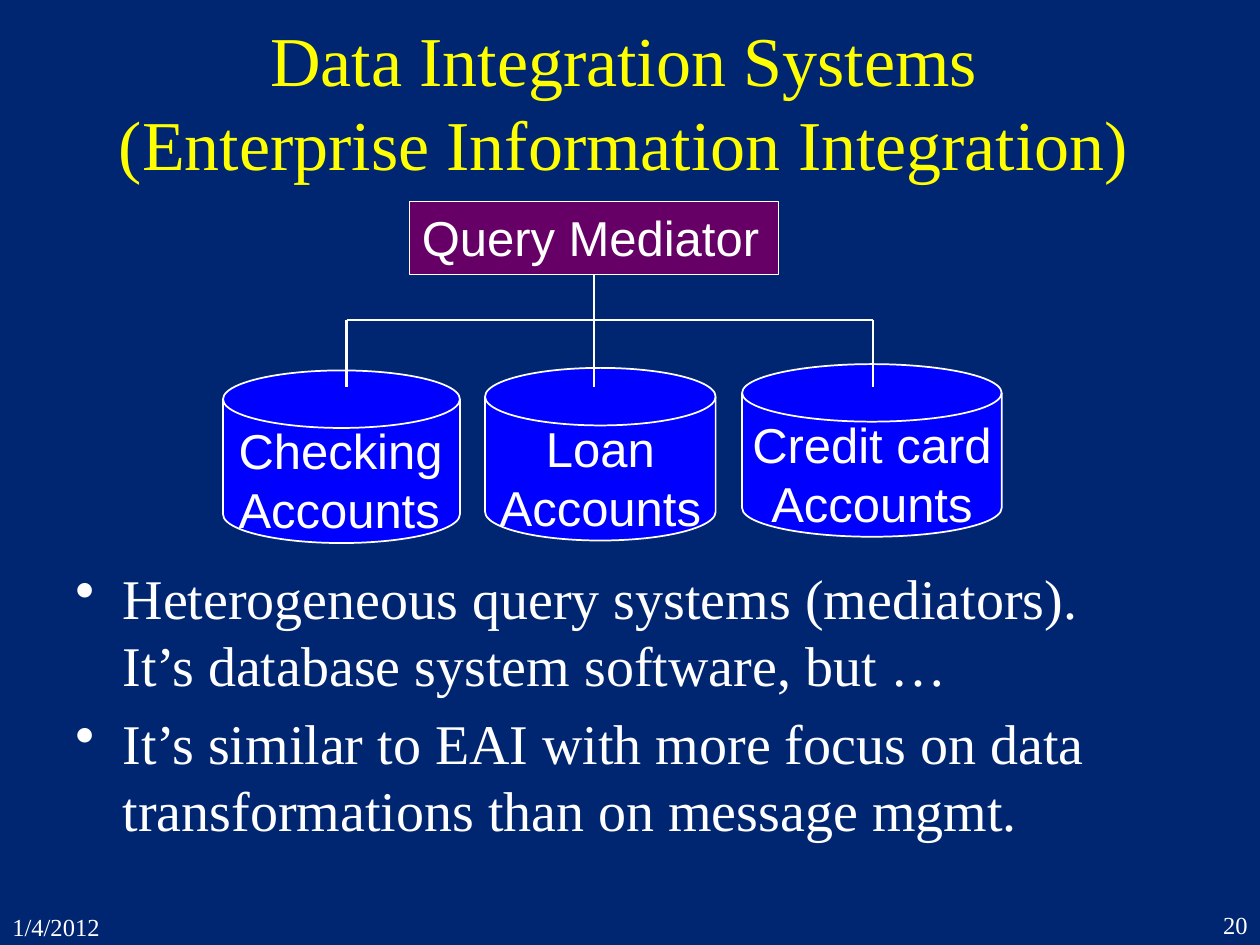
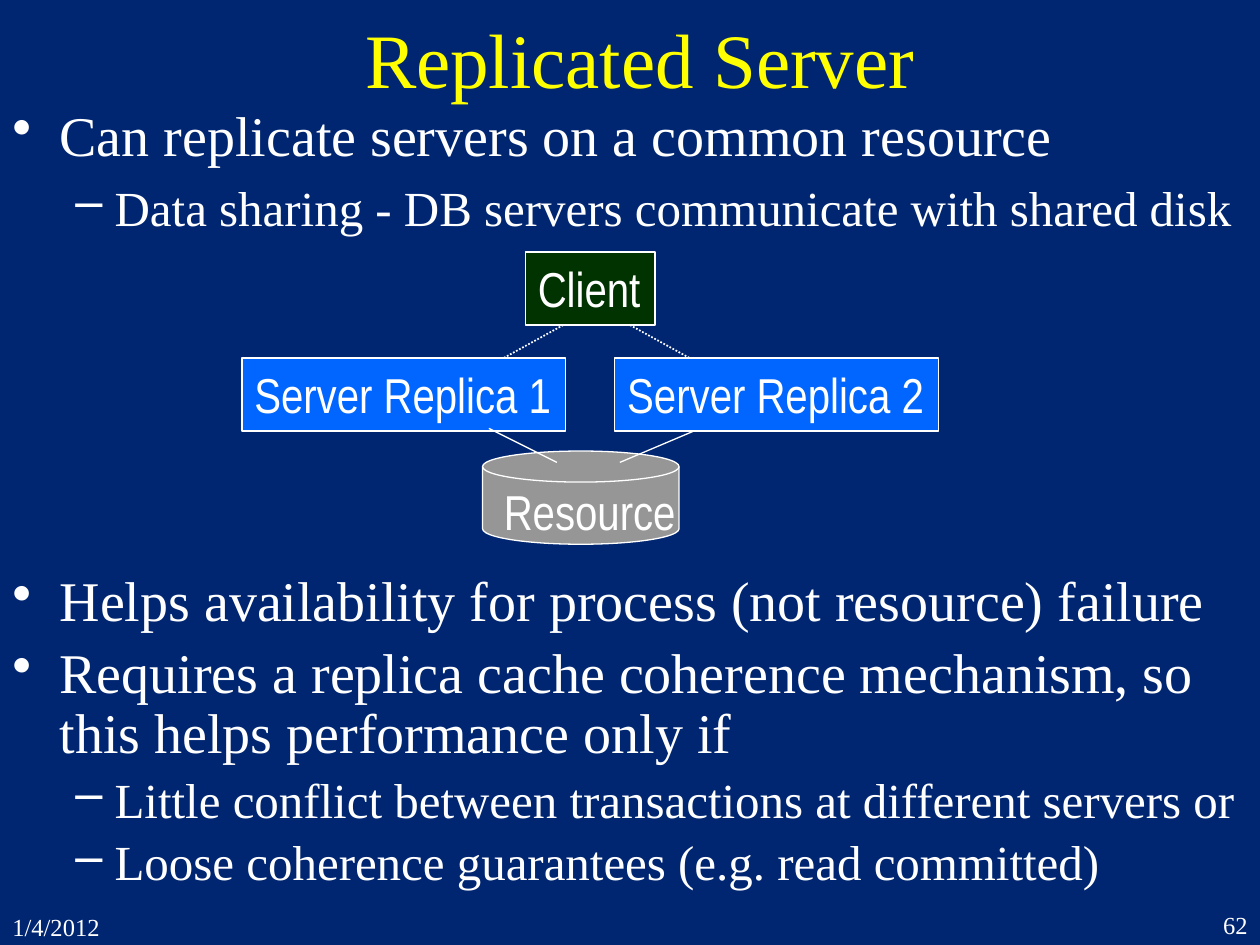
from dataclasses import dataclass

from lxml.etree import SubElement
from pptx import Presentation
from pptx.dml.color import RGBColor
from pptx.enum.dml import MSO_LINE_DASH_STYLE as Dash
from pptx.enum.shapes import MSO_CONNECTOR_TYPE as Link, MSO_SHAPE as Preset
from pptx.enum.text import MSO_ANCHOR as Anchor, PP_ALIGN as Align
from pptx.oxml.ns import qn
from pptx.util import Inches, Pt

NAVY = RGBColor(0x00, 0x26, 0x72)
YELLOW = RGBColor(0xFF, 0xFF, 0x00)
WHITE = RGBColor(0xFF, 0xFF, 0xFF)
PURPLE = RGBColor(0x66, 0x00, 0x66)
BLUE = RGBColor(0x00, 0x00, 0xFF)
SKY = RGBColor(0x00, 0x66, 0xFF)
GREY = RGBColor(0x96, 0x96, 0x96)
GREEN = RGBColor(0x00, 0x33, 0x00)

SERIF, SANS, NARROW = "Times New Roman", "Arial", "Arial Narrow"
SLIDE_WIDTH, SLIDE_HEIGHT = Inches(10), Inches(7.5)
COLUMN, ROW = SLIDE_WIDTH / 100, SLIDE_HEIGHT / 75
DATE = "1/4/2012"
LABEL_SIZE = 28
LEVELS = [("•", 32, 3.75, 3.75), ("–", 28, 8.12, 3.12)]


@dataclass
class Box:
    """A rectangle measured in grid columns and rows."""
    left: float
    top: float
    width: float
    height: float

    def inner(self, left, top, width, height):
        """Return a box placed relative to this one."""
        return Box(self.left + left, self.top + top, width, height)

    def point(self, left, top):
        """Return a point of this box in slide lengths."""
        return round((self.left + left) * COLUMN), round((self.top + top) * ROW)

    def frame(self):
        """Return left, top, width and height in slide lengths."""
        return *self.point(0, 0), round(self.width * COLUMN), round(self.height * ROW)


def style(para, size, font, color=WHITE, align=Align.LEFT):
    """Set alignment and font of one paragraph."""
    para.alignment = align
    para.font.size, para.font.name = Pt(size), font
    para.font.color.rgb = color


def write(frame, lines, size, font, color=WHITE, align=Align.LEFT, wrap=True):
    """Fill a text frame with equally styled paragraphs."""
    frame.word_wrap = wrap
    for index, line in enumerate(lines):
        para = frame.add_paragraph() if index else frame.paragraphs[0]
        para.text = line
        style(para, size, font, color, align)


def add_text(page, box, lines, size, font, **options):
    """Add a plain text box."""
    frame = page.shapes.add_textbox(*box.frame()).text_frame
    write(frame, lines, size, font, **options)
    return frame


def add_bullets(page, box, items, spacing=1.0):
    """Add a list of (level, text) bullet points."""
    frame = page.shapes.add_textbox(*box.frame()).text_frame
    frame.word_wrap = True
    for index, (level, text) in enumerate(items):
        mark, size, margin, hanging = LEVELS[level]
        para = frame.add_paragraph() if index else frame.paragraphs[0]
        para.text, para.level, para.line_spacing = text, level, spacing
        para.space_before = Pt(0.2 * size if index else 0)
        properties = para._p.get_or_add_pPr()
        properties.set("marL", str(round(margin * COLUMN)))
        properties.set("indent", str(-round(hanging * COLUMN)))
        SubElement(properties, qn("a:buChar")).set("char", mark)
        style(para, size, SERIF)


def add_node(page, preset, box, fill, line_width=0.75):
    """Add a filled shape with a white outline."""
    shape = page.shapes.add_shape(preset, *box.frame())
    shape.shadow.inherit = False
    shape.fill.solid()
    shape.fill.fore_color.rgb = fill
    shape.line.color.rgb = WHITE
    shape.line.width = Pt(line_width)
    return shape


def add_block(page, box, text, fill, font):
    """Add a labelled rectangle."""
    block = add_node(page, Preset.RECTANGLE, box, fill)
    block.text_frame.vertical_anchor = Anchor.TOP
    write(block.text_frame, [text], LABEL_SIZE, font, wrap=False)
    return block


def add_line(page, start, end, width=0.75, dash=None):
    """Add a straight white line between two points."""
    line = page.shapes.add_connector(Link.STRAIGHT, *start, *end)
    SubElement(line._element.spPr, qn("a:effectLst"))
    line.line.color.rgb = WHITE
    line.line.width = Pt(width)
    if dash:
        line.line.dash_style = dash
    return line


def add_page(deck, title, title_box, size, number):
    """Add a slide with background, title, date and number."""
    page = deck.slides.add_slide(deck.slide_layouts[6])
    page.background.fill.solid()
    page.background.fill.fore_color.rgb = NAVY
    heading = add_text(page, title_box, [title], size, SERIF, color=YELLOW, align=Align.CENTER)
    heading.vertical_anchor = Anchor.MIDDLE
    add_text(page, Box(0, 71.9, 11.7, 2.5), [DATE], 14, SERIF)
    add_text(page, Box(92.5, 71.7, 7.5, 3.3), [number], 14, SERIF, align=Align.RIGHT)
    return page


def draw_mediator(page, box):
    """Draw the query mediator above its three databases."""
    mediator = add_block(page, box.inner(14.8, 0, 29.3, 5.8), "Query Mediator", PURPLE, SANS)
    databases = [
        (0, 13.4, 18.8, 18.3, ["Checking", "Accounts"], Align.LEFT),
        (20.8, 13.2, 18.3, 18, ["Loan", "Accounts"], Align.CENTER),
        (41.2, 12.9, 20.6, 21.1, ["Credit card", "Accounts"], Align.CENTER),
    ]
    for left, top, width, label_width, lines, align in databases:
        add_node(page, Preset.FLOWCHART_MAGNETIC_DISK, box.inner(left, top, width, 13.7), BLUE, 1)
        label = box.inner(left + (width - label_width) / 2, top + 3.5, label_width, 10.3)
        add_text(page, label, lines, LABEL_SIZE, SANS, align=align, wrap=False)
    bus, drop_end = 9.4, 14.7
    drops = [9.8, 29.45, 51.6]
    trunk = add_line(page, box.point(drops[1], 5.8), box.point(drops[1], bus), 1.5)
    trunk.begin_connect(mediator, 2)
    add_line(page, box.point(drops[0], bus), box.point(drops[-1], bus))
    for drop in drops:
        add_line(page, box.point(drop, bus), box.point(drop, drop_end), 1.5)


def draw_replicas(page, box):
    """Draw a client, two server replicas and their shared resource."""
    add_node(page, Preset.FLOWCHART_MAGNETIC_DISK, box.inner(19.1, 15.8, 15.6, 7.4), GREY)
    add_text(page, box.inner(19.8, 17.7, 15.7, 5.7), ["Resource"], LABEL_SIZE, NARROW, wrap=False)
    for index in range(2):
        replica = box.inner(29.6 * index, 8.4, 25.7, 5.8)
        add_block(page, replica, f"Server Replica {index + 1}", SKY, NARROW)
    add_block(page, box.inner(22.5, 0, 10.3, 5.8), "Client", GREEN, NARROW)
    for server, resource in [((19.6, 14), (25, 16.7)), ((35.9, 14.2), (30, 16.7))]:
        add_line(page, box.point(*server), box.point(*resource))
    for client, server in [(25.5, 20.8), (30.8, 35.5)]:
        add_line(page, box.point(client, 5.8), box.point(server, 8.4), 1, Dash.ROUND_DOT)


def build_integration(deck):
    """Build the data integration slide."""
    title = "Data Integration Systems\n(Enterprise Information Integration)"
    page = add_page(deck, title, Box(7, 1.7, 85, 12.5), 40, "20")
    draw_mediator(page, Box(17.7, 16, 61.8, 27.1))
    add_bullets(page, Box(5, 44.2, 95.6, 28.6), [
        (0, "Heterogeneous query systems (mediators).\nIt’s database system software, but …"),
        (0, "It’s similar to EAI with more focus on data transformations than on message mgmt."),
    ])


def build_replication(deck):
    """Build the replicated server slide."""
    page = add_page(deck, "Replicated Server", Box(8.3, 0, 85, 9.2), 44, "62")
    add_bullets(page, Box(0, 7.5, 100, 13.3), [
        (0, "Can replicate servers on a common resource"),
        (1, "Data sharing - DB servers communicate with shared disk"),
    ])
    draw_replicas(page, Box(19.2, 20, 55.3, 23.4))
    add_bullets(page, Box(0, 45, 100, 28.3), [
        (0, "Helps availability for process (not resource) failure"),
        (0, "Requires a replica cache coherence mechanism, so this helps performance only if"),
        (1, "Little conflict between transactions at different servers or"),
        (1, "Loose coherence guarantees (e.g. read committed)"),
    ], spacing=0.9)


def main():
    """Build and save the deck."""
    deck = Presentation()
    deck.slide_width, deck.slide_height = SLIDE_WIDTH, SLIDE_HEIGHT
    build_integration(deck)
    build_replication(deck)
    deck.save("out.pptx")


if __name__ == "__main__":
    main()
